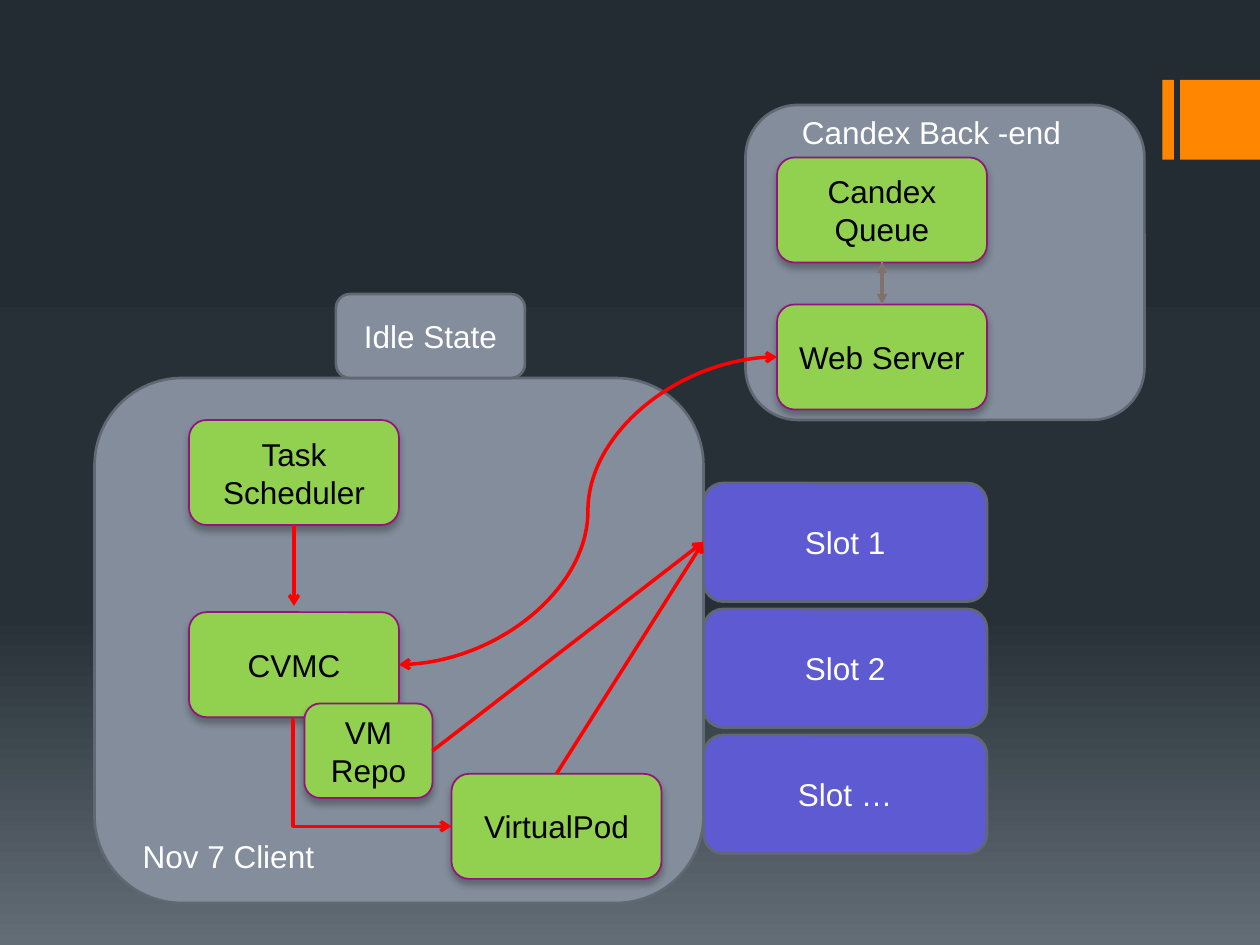
import copy
import dataclasses

import pptx
import pptx.dml.color
import pptx.enum.shapes
import pptx.enum.text
import pptx.oxml
import pptx.oxml.ns
import pptx.util

RGBColor = pptx.dml.color.RGBColor
SHAPES = pptx.enum.shapes.MSO_SHAPE
CONNECTORS = pptx.enum.shapes.MSO_CONNECTOR
qn = pptx.oxml.ns.qn

EMU_PER_PX = 7620  # 120 px to the inch
FONT = "Arial"
BLACK = RGBColor(0x00, 0x00, 0x00)
WHITE = RGBColor(0xFF, 0xFF, 0xFF)
ORANGE = RGBColor(0xFF, 0x86, 0x00)
GREY = RGBColor(0x83, 0x8D, 0x9B)
DARK_GREY = RGBColor(0x61, 0x68, 0x73)
GREEN = RGBColor(0x92, 0xD0, 0x50)
PURPLE = RGBColor(0x94, 0x14, 0x7C)
VIOLET = RGBColor(0x5D, 0x5A, 0xD2)
RED = RGBColor(0xFF, 0x00, 0x00)
TAUPE = RGBColor(0x80, 0x71, 0x6A)
BACKGROUND = [
    (0, RGBColor(0x24, 0x2C, 0x33)),
    (0.65, RGBColor(0x27, 0x30, 0x37)),
    (1, RGBColor(0x63, 0x6D, 0x76)),
]


@dataclasses.dataclass
class Box:
    left: int
    top: int
    width: int
    height: int

    def inner(self, x, y, width, height):
        """Box placed relative to this one."""
        return Box(self.left + x, self.top + y, width, height)

    def at(self, x, y):
        """Point at the given fractions of width and height."""
        return round(self.left + x * self.width), round(self.top + y * self.height)

    def emu(self):
        return [px(value) for value in dataclasses.astuple(self)]


def px(value):
    return pptx.util.Emu(value * EMU_PER_PX)


def add_run(paragraph, text, color):
    run = paragraph.add_run()
    run.text = text
    run.font.name = FONT
    run.font.size = pptx.util.Pt(18)
    run.font.color.rgb = color


def add_block(slide, box, fill, line=None, weight=1.5, text="", color=WHITE,
              kind=SHAPES.ROUNDED_RECTANGLE):
    shape = slide.shapes.add_shape(kind, *box.emu())
    shape.shadow.inherit = False
    shape.fill.solid()
    shape.fill.fore_color.rgb = fill
    if line is None:
        shape.line.fill.background()
    else:
        shape.line.color.rgb = line
        shape.line.width = pptx.util.Pt(weight)
    if text:
        frame = shape.text_frame
        frame.word_wrap = True
        frame.vertical_anchor = pptx.enum.text.MSO_ANCHOR.MIDDLE
        paragraph = frame.paragraphs[0]
        paragraph.alignment = pptx.enum.text.PP_ALIGN.CENTER
        add_run(paragraph, text, color)
    return shape


def add_component(slide, box, text):
    """Green box with a soft shadow below it."""
    shape = add_block(slide, box, GREEN, PURPLE, 1, text, BLACK)
    effects = shape.element.spPr.find(qn("a:effectLst"))
    effects.append(pptx.oxml.parse_xml(
        f'<a:outerShdw {pptx.oxml.ns.nsdecls("a")} blurRad="50800" dist="38100" '
        'dir="5400000" rotWithShape="0"><a:srgbClr val="000000">'
        '<a:alpha val="28000"/></a:srgbClr></a:outerShdw>'))
    return box


def add_label(slide, box, text):
    frame = slide.shapes.add_textbox(*box.emu()).text_frame
    frame.word_wrap = False
    frame.auto_size = pptx.enum.text.MSO_AUTO_SIZE.SHAPE_TO_FIT_TEXT
    add_run(frame.paragraphs[0], text, WHITE)


def add_arrow(slide, start, end, color=RED, weight=2, kind=CONNECTORS.STRAIGHT,
              head=None, tail="arrow", bend=None):
    connector = slide.shapes.add_connector(kind, *map(px, start + end))
    connector.line.color.rgb = color
    connector.line.width = pptx.util.Pt(weight)
    properties = connector.element.spPr
    line = properties.find(qn("a:ln"))
    for tag, arrowhead in (("a:headEnd", head), ("a:tailEnd", tail)):
        if arrowhead:
            line.append(pptx.oxml.parse_xml(
                f'<{tag} {pptx.oxml.ns.nsdecls("a")} type="{arrowhead}"/>'))
    if bend is not None:
        guides = properties.find(qn("a:prstGeom")).get_or_add_avLst()
        guides.append(pptx.oxml.parse_xml(
            f'<a:gd {pptx.oxml.ns.nsdecls("a")} name="adj1" fmla="val {bend}"/>'))
    properties.append(pptx.oxml.parse_xml(
        f'<a:effectLst {pptx.oxml.ns.nsdecls("a")}/>'))


def paint_background(slide):
    fill = slide.background.fill
    fill.gradient()
    fill.gradient_angle = 270
    stop_list = slide.element.find(".//" + qn("a:gsLst"))
    stop_list.append(copy.deepcopy(stop_list[-1]))
    for stop, (position, color) in zip(fill.gradient_stops, BACKGROUND):
        stop.position = position
        stop.color.rgb = color


def draw_accent(slide, box):
    for x, width in ((0, 11), (box.width - box.height, box.height)):
        add_block(slide, box.inner(x, 0, width, box.height), ORANGE,
                  kind=SHAPES.RECTANGLE)


def draw_client(slide, box):
    """Draw the client panel and return its linked components."""
    add_block(slide, box, GREY, DARK_GREY)
    scheduler = add_component(slide, box.inner(90, 40, 200, 100), "Task Scheduler")
    manager = add_component(slide, box.inner(90, 223, 200, 100), "CVMC")
    machine = add_component(slide, box.inner(340, 377, 200, 100), "VirtualPod")
    start_x, bottom = scheduler.at(0.5, 1)
    add_arrow(slide, (start_x, bottom), (start_x, manager.top - 6))
    start_x, bottom = manager.at(0.5, 1)
    add_arrow(slide, (start_x, bottom + 3), machine.at(0, 0.5),
              kind=CONNECTORS.ELBOW, bend=-800)
    add_block(slide, box.inner(230, -80, 180, 80), GREY, DARK_GREY, text="Idle State")
    repository = add_component(slide, box.inner(200, 310, 122, 90), "VM Repo")
    add_label(slide, box.inner(34, 431, 197, 48), "Nov 7 Client")
    return manager, machine, repository


def draw_back_end(slide, box):
    """Draw the back-end panel and return its web server."""
    add_block(slide, box, GREY, DARK_GREY)
    server = add_component(slide, box.inner(30, 190, 200, 100), "Web Server")
    queue = add_component(slide, box.inner(30, 50, 200, 100), "Candex Queue")
    ends = queue.at(0.5, 1), server.at(0.5, 0)
    add_arrow(slide, *ends, color=GREY, weight=1)
    add_arrow(slide, *ends[::-1], color=GREY, weight=1)
    add_arrow(slide, *ends[::-1], color=TAUPE, head="triangle", tail="triangle")
    add_label(slide, box.inner(42, 2, 295, 48), "Candex Back -end")
    return server


def draw_slots(slide, box):
    """Draw the stacked slots and return the first one."""
    slots = [box.inner(0, 120 * row, box.width, 113) for row in range(3)]
    for slot, name in zip(slots, ("Slot 1", "Slot 2", "Slot …")):
        add_block(slide, slot, VIOLET, DARK_GREY, text=name)
    return slots[0]


def main():
    presentation = pptx.Presentation()
    presentation.slide_width, presentation.slide_height = px(1200), px(900)
    slide = presentation.slides.add_slide(presentation.slide_layouts[6])
    paint_background(slide)
    draw_accent(slide, Box(1107, 76, 93, 76))
    manager, machine, repository = draw_client(slide, Box(90, 360, 580, 500))
    server = draw_back_end(slide, Box(710, 100, 380, 300))
    first_slot = draw_slots(slide, Box(670, 460, 270, 353))
    add_arrow(slide, manager.at(1, 0.5), server.at(0, 0.5),
              kind=CONNECTORS.CURVE, head="arrow")
    for start in (machine.at(0.5, 0), repository.at(1, 0.5)):
        add_arrow(slide, start, first_slot.at(0, 0.5))
    presentation.save("out.pptx")


if __name__ == "__main__":
    main()
